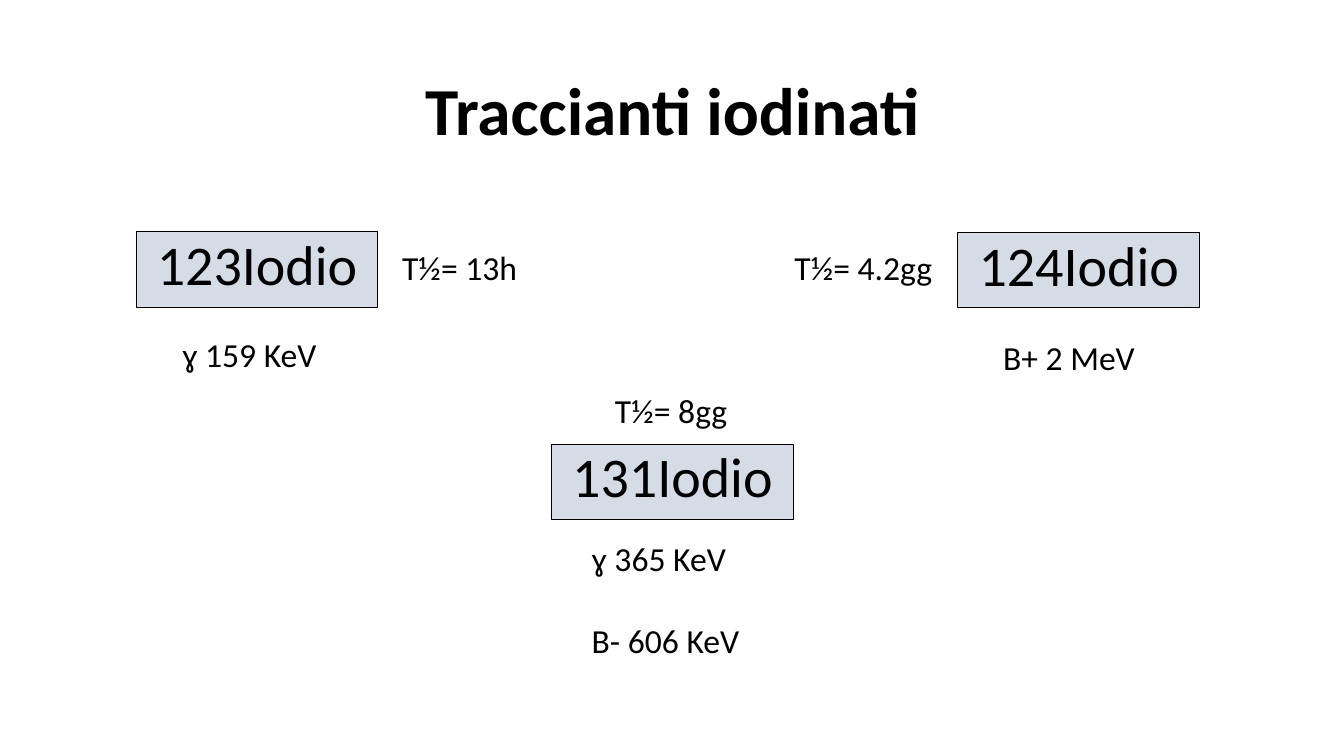
import dataclasses

import pptx
import pptx.dml.color
import pptx.enum.shapes
import pptx.enum.text
import pptx.util


@dataclasses.dataclass(frozen=True)
class Theme:
    """Colours, type sizes and spacing of the slide."""
    font: str = "Calibri"
    ink: str = "000000"
    tile: str = "D6DCE5"
    title_size: int = 48
    tile_size: int = 40
    label_size: int = 24
    paragraph_gap: float = 29.3
    tight: float = 0.9


@dataclasses.dataclass(frozen=True)
class Box:
    """A box measured in grid columns and rows."""
    left: float
    top: float
    width: float
    height: float

    def inside(self, parent):
        """Return this box moved to the origin of its parent."""
        return Box(parent.left + self.left, parent.top + self.top, self.width, self.height)

    def lengths(self):
        """Return left, top, width and height as slide lengths."""
        return (round(self.left * COLUMN), round(self.top * ROW),
                round(self.width * COLUMN), round(self.height * ROW))


@dataclasses.dataclass(frozen=True)
class Tracer:
    """An iodine tracer, with label boxes relative to its tile."""
    name: str
    tile: Box
    half_life: str
    half_life_box: Box
    energies: tuple
    energy_box: Box


THEME = Theme()
SLIDE_WIDTH = pptx.util.Inches(13.33)
SLIDE_HEIGHT = pptx.util.Inches(7.5)
COLUMN = SLIDE_WIDTH / 100
ROW = SLIDE_HEIGHT / 100

TITLE_BOX = Box(6.9, 5.33, 86.27, 19.33)
TRACERS = (
    Tracer("123Iodio", Box(10.13, 30.67, 18, 10),
           "T½= 13h", Box(19.05, 1.33, 10.13, 6.67),
           ("ɣ 159 KeV",), Box(2.7, 12.8, 12.6, 10.8)),
    Tracer("124Iodio", Box(71.27, 30.8, 18, 9.87),
           "T½= 4.2gg", Box(-12.9, 1.2, 11.85, 6.67),
           ("Β+ 2 MeV",), Box(2.63, 13.07, 12.6, 6.67)),
    Tracer("131Iodio", Box(41.04, 58.8, 18, 9.87),
           "T½= 8gg", Box(3.98, -7.87, 9.98, 6.67),
           ("ɣ 365 KeV", "Β- 606 KeV"), Box(2.25, 11.73, 13.5, 17.47)),
)


def write(frame, lines, size, centred=False, bold=False, wrap=True):
    """Fill a text frame with evenly styled paragraphs."""
    frame.word_wrap = wrap
    for index, line in enumerate(lines):
        paragraph = frame.add_paragraph() if index else frame.paragraphs[0]
        paragraph.text = line
        paragraph.alignment = (pptx.enum.text.PP_ALIGN.CENTER if centred
                               else pptx.enum.text.PP_ALIGN.LEFT)
        if centred:
            paragraph.line_spacing = THEME.tight
        if index:
            paragraph.space_before = pptx.util.Pt(THEME.paragraph_gap)
        paragraph.font.name = THEME.font
        paragraph.font.size = pptx.util.Pt(size)
        paragraph.font.bold = bold
        paragraph.font.color.rgb = pptx.dml.color.RGBColor.from_string(THEME.ink)


def add_title(slide, box, title):
    """Place the centred slide title in its box."""
    frame = slide.shapes.add_textbox(*box.lengths()).text_frame
    frame.vertical_anchor = pptx.enum.text.MSO_ANCHOR.MIDDLE
    write(frame, [title], THEME.title_size, centred=True, bold=True)


def add_tracer(slide, box, tracer):
    """Place a tracer's tile in the box, and its labels around it."""
    tile = slide.shapes.add_shape(pptx.enum.shapes.MSO_SHAPE.RECTANGLE, *box.lengths())
    tile.shadow.inherit = False
    tile.fill.solid()
    tile.fill.fore_color.rgb = pptx.dml.color.RGBColor.from_string(THEME.tile)
    tile.line.color.rgb = pptx.dml.color.RGBColor.from_string(THEME.ink)
    tile.line.width = pptx.util.Pt(0.75)
    tile.text_frame.vertical_anchor = pptx.enum.text.MSO_ANCHOR.TOP
    write(tile.text_frame, [tracer.name], THEME.tile_size, centred=True)

    half_life = slide.shapes.add_textbox(*tracer.half_life_box.inside(box).lengths())
    write(half_life.text_frame, [tracer.half_life], THEME.label_size, wrap=False)
    energies = slide.shapes.add_textbox(*tracer.energy_box.inside(box).lengths())
    write(energies.text_frame, tracer.energies, THEME.label_size)


def main():
    """Build and save the slide on iodine tracers."""
    deck = pptx.Presentation()
    deck.slide_width = SLIDE_WIDTH
    deck.slide_height = SLIDE_HEIGHT
    slide = deck.slides.add_slide(deck.slide_layouts[6])
    add_title(slide, TITLE_BOX, "Traccianti iodinati")
    for tracer in TRACERS:
        add_tracer(slide, tracer.tile, tracer)
    deck.save("out.pptx")


if __name__ == "__main__":
    main()
